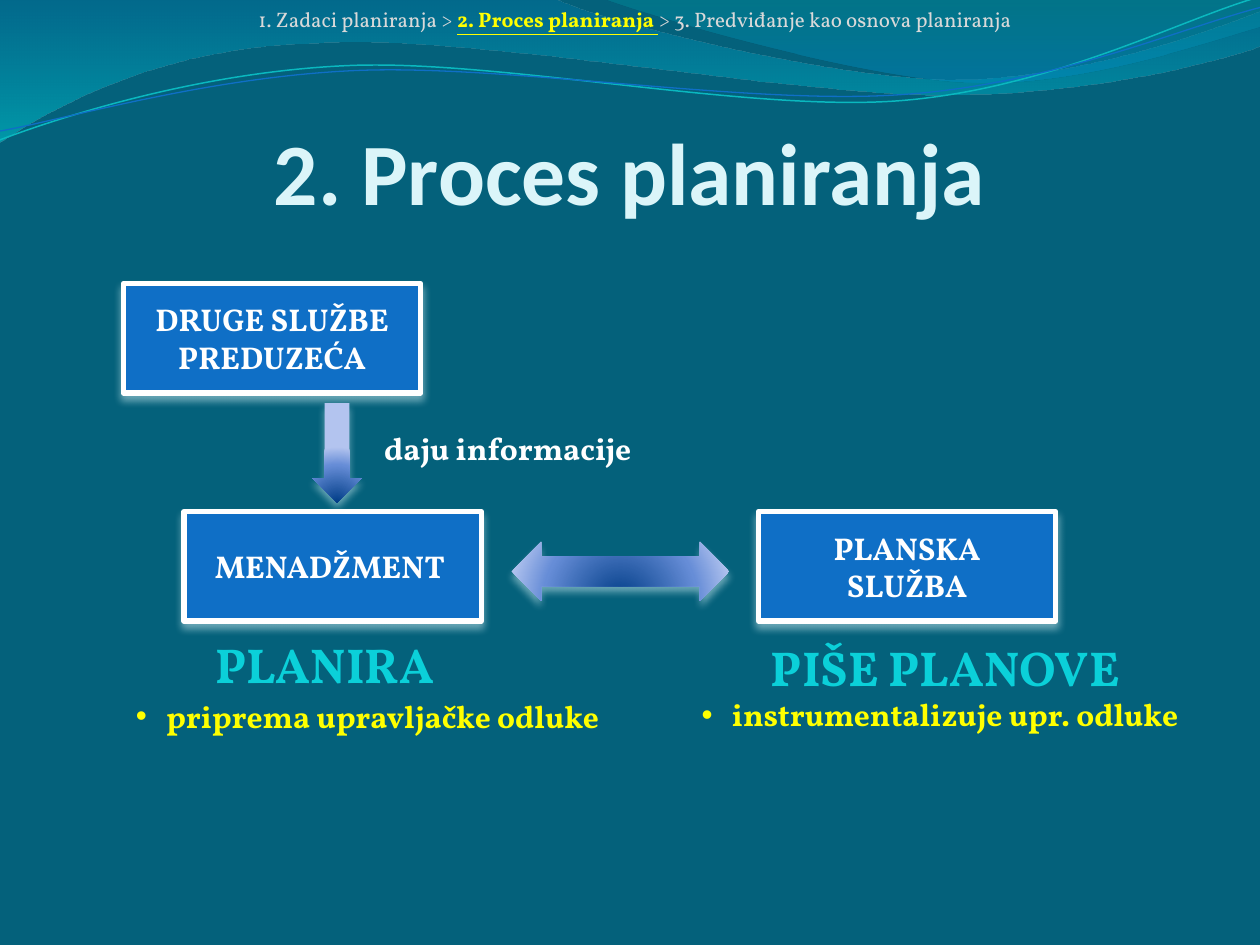
from dataclasses import dataclass
from math import cos, radians, sin
from typing import NamedTuple

from pptx import Presentation
from pptx.dml.color import RGBColor
from pptx.enum.shapes import MSO_SHAPE as Shape
from pptx.enum.text import MSO_ANCHOR as Anchor, PP_ALIGN as Align
from pptx.oxml import parse_xml
from pptx.oxml.ns import nsdecls, qn
from pptx.util import Inches, Pt

SLIDE_W, SLIDE_H = Inches(10), Inches(7.5)
CELL = SLIDE_W / 10
BOX_W, BOX_H = 2.36, 0.87
BULLET_INDENT = 0.24

TEAL = RGBColor(0x04, 0x61, 0x7B)
BLUE = RGBColor(0x0F, 0x6F, 0xC6)
AQUA = RGBColor(0x0A, 0xB8, 0xBF)
CYAN = RGBColor(0x0B, 0xD0, 0xD9)
ICE = RGBColor(0xDB, 0xF5, 0xF9)
GREY = RGBColor(0xD9, 0xD9, 0xD9)
WHITE = RGBColor(0xFF, 0xFF, 0xFF)
YELLOW = RGBColor(0xFF, 0xFF, 0x00)
LAGOON = RGBColor(0x00, 0x74, 0xA1)
TURQUOISE = RGBColor(0x00, 0xC6, 0xCF)
SEA = RGBColor(0x00, 0xA1, 0xA9)
AZURE = RGBColor(0x00, 0x8B, 0xBF)
NAVY = RGBColor(0x00, 0x3D, 0x87)
STEEL = RGBColor(0x66, 0x8D, 0xD7)
PALE = RGBColor(0xB3, 0xC4, 0xEF)

LINEAR = '<a:lin ang="5400000" scaled="1"/>'
RADIAL = ('<a:path path="circle"><a:fillToRect l="50000" t="130000" '
          'r="50000" b="-30000"/></a:path>')


class Stop(NamedTuple):
    pos: int
    color: RGBColor
    alpha: int = 100


class Area(NamedTuple):
    col: float
    row: float
    cols: float
    rows: float


@dataclass
class Wave:
    start: tuple
    segments: list
    stops: tuple = ()
    color: RGBColor = BLUE
    width: float = 0
    tilt: float = 0
    center: tuple = (0, 0)


@dataclass
class Label:
    area: Area
    text: str
    size: float
    color: RGBColor
    bullet: bool = False


ARROW_STOPS = (Stop(0, NAVY), Stop(68, STEEL), Stop(100, PALE))

WAVES = [
    Wave((0, 0), [(4.4, -0.01),
                  (4.76, 0.17, 6.64, 0.63, 7.58, 0.63),
                  (8.53, 0.63, 9.58, 0.26, 10, 0.09),
                  (10.01, 0.36),
                  (9.83, 0.44, 8.7, 0.76, 7.46, 0.75),
                  (6.22, 0.75, 3.82, 0.28, 2.57, 0.34),
                  (1.29, 0.36, 0.46, 0.83, -0.01, 1.13),
                  (0, 0)],
         (Stop(0, LAGOON, 45), Stop(100, TURQUOISE, 55))),
    Wave((4.79, -0.01), [(5.09, 0.11, 6.82, 0.62, 7.69, 0.65),
                         (8.56, 0.69, 9.61, 0.32, 10, 0.21),
                         (10, 0),
                         (4.79, -0.01)],
         (Stop(0, SEA, 30), Stop(80, AZURE, 45))),
    Wave((0, 1.11), [(0.48, 0.93, 1.58, 0.57, 2.77, 0.52),
                     (3.95, 0.47, 5.93, 0.89, 7.13, 0.8),
                     (8.33, 0.71, 9.38, 0.15, 9.98, -0.02)],
         color=AQUA, width=0.85, tilt=-2.7, center=(4.99, 0.57)),
    Wave((0, 1.04), [(0.47, 0.96, 1.64, 0.61, 2.83, 0.56),
                     (4.03, 0.51, 5.97, 0.84, 7.17, 0.75),
                     (8.36, 0.67, 9.41, 0.21, 10, 0.06)],
         color=BLUE, width=0.75, tilt=-2.7, center=(5, 0.59)),
]

BOXES = [
    (0.98, 2.25, "DRUGE SLUŽBE PREDUZEĆA"),
    (1.46, 4.06, "MENADŽMENT "),
    (6.02, 4.06, "PLANSKA SLUŽBA"),
]

ARROWS = [
    (Shape.DOWN_ARROW, Area(2.48, 3.2, 0.39, 0.79)),
    (Shape.LEFT_RIGHT_ARROW, Area(4.06, 4.3, 1.73, 0.47)),
]

LABELS = [
    Label(Area(2.95, 3.36, 2.52, 0.4), "daju informacije", 18, WHITE),
    Label(Area(0.98, 5.48, 4.49, 0.4), "priprema upravljačke odluke", 18, YELLOW, True),
    Label(Area(1.61, 4.99, 2.44, 0.57), "PLANIRA", 28, CYAN),
    Label(Area(6.02, 5.01, 3.15, 0.57), "PIŠE PLANOVE", 28, CYAN),
    Label(Area(5.47, 5.47, 4.49, 0.4), "instrumentalizuje upr. odluke", 18, YELLOW, True),
]

BREADCRUMB = [
    ("1. Zadaci planiranja > ", GREY, False),
    ("2. Proces planiranja ", YELLOW, True),
    ("> 3. Predviđanje kao osnova planiranja", GREY, False),
]


def emu(*cells: float) -> list[int]:
    return [round(c * CELL) for c in cells]


def set_gradient(s, stops: tuple, direction: str) -> None:
    s.fill.background()
    marks = "".join(
        f'<a:gs pos="{stop.pos * 1000}"><a:srgbClr val="{stop.color}">'
        f'<a:alpha val="{stop.alpha * 1000}"/></a:srgbClr></a:gs>' for stop in stops)
    spPr = s._element.spPr
    spPr.replace(spPr.find(qn("a:noFill")), parse_xml(
        f'<a:gradFill {nsdecls("a")} rotWithShape="1">'
        f'<a:gsLst>{marks}</a:gsLst>{direction}</a:gradFill>'))


def set_shadow(s) -> None:
    s.shadow.inherit = False
    s._element.spPr.find(qn("a:effectLst")).append(parse_xml(
        f'<a:outerShdw {nsdecls("a")} blurRad="{Pt(4.5)}" dist="{Pt(3)}" '
        f'dir="5400000" rotWithShape="0"><a:srgbClr val="{ICE}">'
        f'<a:alpha val="48000"/></a:srgbClr></a:outerShdw>'))


def level(point: tuple, wave: Wave) -> list[int]:
    angle = radians(-wave.tilt)
    cx, cy = wave.center
    dx, dy = point[0] - cx, point[1] - cy
    return emu(cx + dx * cos(angle) - dy * sin(angle),
               cy + dx * sin(angle) + dy * cos(angle))


def bend_lines(s, segments: list) -> None:
    lines = iter(list(s._element.iter(qn("a:lnTo"))))
    for seg in segments:
        if len(seg) == 6:
            parts = [next(lines) for _ in range(3)]
            curve = parse_xml(f'<a:cubicBezTo {nsdecls("a")}/>')
            parts[0].addprevious(curve)
            for part in parts:
                curve.append(part[0])
                part.getparent().remove(part)
        else:
            next(lines)


def add_wave(shapes, wave: Wave) -> None:
    points = [seg[i:i + 2] for seg in wave.segments for i in range(0, len(seg), 2)]
    builder = shapes.build_freeform(*level(wave.start, wave), scale=1.0)
    builder.add_line_segments([level(pt, wave) for pt in points], close=bool(wave.stops))
    s = builder.convert_to_shape()
    bend_lines(s, wave.segments)
    s.rotation = wave.tilt
    s.shadow.inherit = False
    if wave.stops:
        set_gradient(s, wave.stops, LINEAR)
        s.line.fill.background()
    else:
        s.fill.background()
        s.line.color.rgb = wave.color
        s.line.width = Pt(wave.width)


def style_paragraph(p, size: float, color: RGBColor, bold: bool = True,
                    name: str = "Vollkorn", align=Align.LEFT) -> None:
    p.alignment = align
    p.font.name, p.font.size, p.font.bold = name, Pt(size), bold
    p.font.color.rgb = color


def add_text(shapes, area: Area):
    tf = shapes.add_textbox(*emu(*area)).text_frame
    tf.word_wrap = True
    return tf


def add_label(shapes, label: Label) -> None:
    p = add_text(shapes, label.area).paragraphs[0]
    p.text = label.text
    style_paragraph(p, label.size, label.color)
    if label.bullet:
        pPr = p._p.get_or_add_pPr()
        indent, = emu(BULLET_INDENT)
        pPr.set("marL", str(indent))
        pPr.set("indent", str(-indent))
        for i, tag in enumerate(('buFont typeface="Arial"', 'buChar char="•"')):
            pPr.insert(i, parse_xml(f'<a:{tag} {nsdecls("a")}/>'))


def add_box(shapes, col: float, row: float, text: str) -> None:
    s = shapes.add_shape(Shape.RECTANGLE, *emu(col, row, BOX_W, BOX_H))
    s.fill.solid()
    s.fill.fore_color.rgb = BLUE
    s.line.color.rgb = WHITE
    s.line.width = Pt(3)
    set_shadow(s)
    s.text_frame.vertical_anchor = Anchor.MIDDLE
    p = s.text_frame.paragraphs[0]
    p.text = text
    style_paragraph(p, 18, WHITE, align=Align.CENTER)


def add_arrow(shapes, kind, area: Area) -> None:
    s = shapes.add_shape(kind, *emu(*area))
    set_gradient(s, ARROW_STOPS, RADIAL)
    s.line.fill.background()
    set_shadow(s)


def add_title(shapes) -> None:
    tf = add_text(shapes, Area(0.5, 0.52, 9, 1.25))
    tf.vertical_anchor = Anchor.BOTTOM
    tf.margin_left = tf.margin_right = tf.margin_bottom = 0
    p = tf.paragraphs[0]
    p.text = "2. Proces planiranja"
    style_paragraph(p, 50, ICE, name="Calibri", align=Align.CENTER)


def add_breadcrumb(shapes) -> None:
    p = add_text(shapes, Area(0.04, 0, 10, 0.3)).paragraphs[0]
    style_paragraph(p, 12, GREY, bold=False, align=Align.CENTER)
    for text, color, current in BREADCRUMB:
        r = p.add_run()
        r.text = text
        r.font.color.rgb = color
        r.font.bold = r.font.underline = current


def main() -> None:
    prs = Presentation()
    prs.slide_width, prs.slide_height = SLIDE_W, SLIDE_H
    slide = prs.slides.add_slide(prs.slide_layouts[6])
    slide.background.fill.solid()
    slide.background.fill.fore_color.rgb = TEAL
    shapes = slide.shapes
    for wave in WAVES:
        add_wave(shapes, wave)
    add_title(shapes)
    add_breadcrumb(shapes)
    for box in BOXES:
        add_box(shapes, *box)
    for arrow in ARROWS:
        add_arrow(shapes, *arrow)
    for label in LABELS:
        add_label(shapes, label)
    prs.save("out.pptx")


if __name__ == "__main__":
    main()
